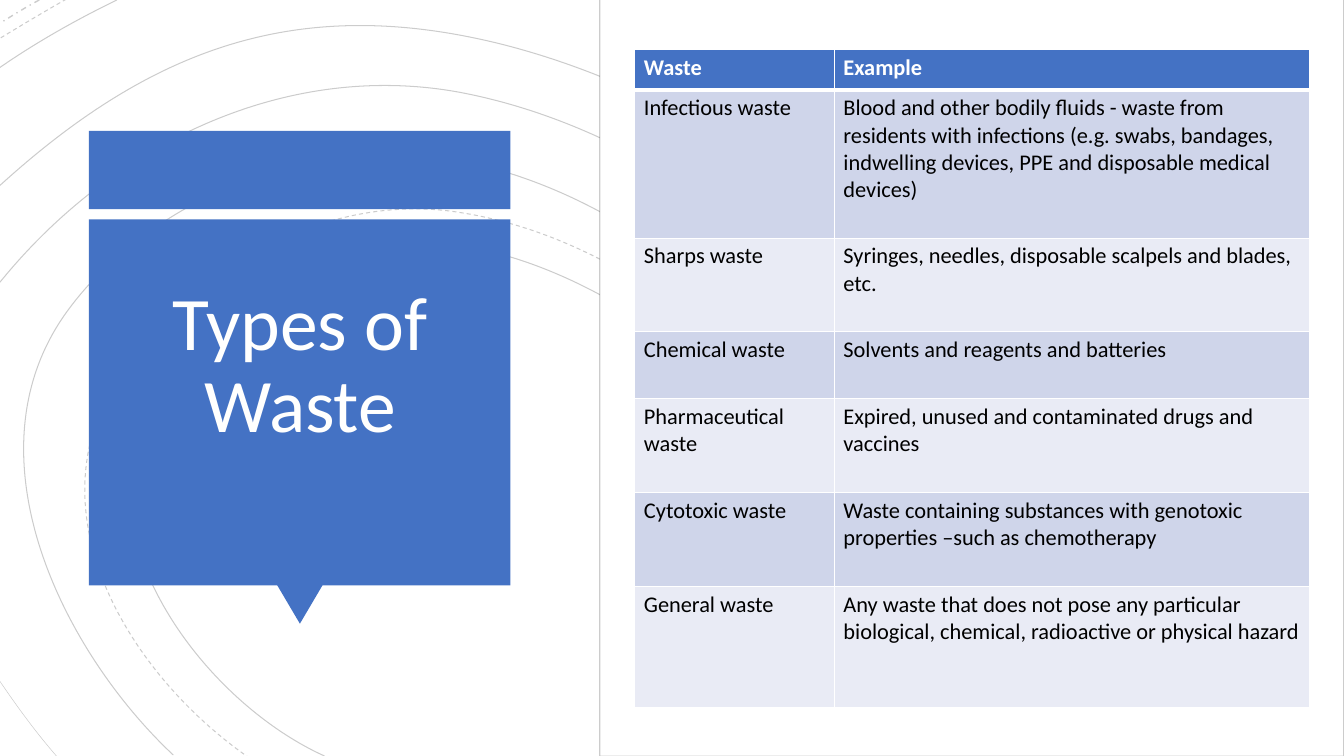
"""Build the "Types of Waste" slide: title block, contour lines and a table of examples."""
from lxml.etree import SubElement
from pptx import Presentation
from pptx.dml.color import RGBColor
from pptx.enum.dml import MSO_LINE as Dash
from pptx.enum.shapes import MSO_SHAPE as Shape
from pptx.enum.text import MSO_ANCHOR as Anchor, PP_ALIGN as Align
from pptx.oxml.ns import qn
from pptx.util import Pt

COLORS = {
    "accent": "4472C4",
    "white": "FFFFFF",
    "title": "FFFFFE",
    "black": "000000",
    "band_dark": "CFD5EA",
    "band_light": "E9EBF5",
}


def write_text(frame, text, size=16, color="black", bold=False, align=Align.LEFT, spacing=1.0):
    frame.word_wrap = True
    paragraph = frame.paragraphs[0]
    paragraph.alignment = align
    paragraph.line_spacing = spacing
    run = paragraph.add_run()
    run.text = text
    run.font.name = "Calibri"
    run.font.size = Pt(size)
    run.font.bold = bold
    run.font.color.rgb = RGBColor.from_string(COLORS[color])


def style_shape(shape, fill=None, line_width=None, dash=Dash.SOLID):
    shape.shadow.inherit = False
    if fill:
        shape.fill.solid()
        shape.fill.fore_color.rgb = RGBColor.from_string(COLORS[fill])
    else:
        shape.fill.background()
    if line_width:
        shape.line.width = Pt(line_width)
        shape.line.dash_style = dash
        shape.line.color.rgb = RGBColor.from_string(COLORS["black"])
        line_color = shape.line._ln.find(f".//{qn('a:srgbClr')}")
        SubElement(line_color, qn("a:alpha"), val="20000")
    else:
        shape.line.fill.background()


presentation = Presentation()
presentation.slide_width = Pt(960)
presentation.slide_height = Pt(540)
slide = presentation.slides.add_slide(presentation.slide_layouts[6])
shapes = slide.shapes

contours = [
    (0.75, Dash.SOLID, [
        (631, 541), (738, 450), (601.2, 294.5), (531.4, 226.8), (467.3, 165.6), (385.9, 118.1),
        (296.6, 110.2), (206.6, 101.5), (101.5, 149.8), (49, 221), (-25.9, 321.8),
        (43.2, 463.7), (123.8, 539.3)]),
    (0.75, Dash.SOLID, [
        (437, 540), (511.2, 522.7), (633.6, 480.2), (594, 380.9), (556.6, 287.3), (442.8, 200.2),
        (345.6, 178.6), (257, 158.4), (155.5, 202.3), (108.7, 281.5), (52.6, 377.3),
        (144, 500.4), (231.8, 540)]),
    (0.75, Dash.DASH, [
        (507.6, 540.7), (550.8, 524.9), (601.2, 501.1), (624.2, 459.4), (652.3, 409),
        (622.1, 356.4), (588.2, 316.8), (520.6, 236.9), (426.2, 163.4), (319, 150.5),
        (229.7, 140.4), (139, 192.2), (87.8, 265), (19.4, 362.9), (91.4, 481), (177.1, 540.7)]),
    (0.75, Dash.SOLID, [
        (702, 540.7), (813.6, 434.9), (684, 297.4), (603.4, 220.3), (527, 148.3),
        (434.2, 86.4), (329.8, 66.2), (204.5, 42.5), (79.9, 103), (0, 201.6)]),
    (0.38, Dash.SOLID, [(0, 486.7), (13.7, 506.9), (26.6, 524.2), (40.3, 540)]),
    (0.75, Dash.SOLID, [
        (766.8, 540.7), (873.4, 428.4), (768.2, 303.8), (679.7, 221), (588.2, 136.1),
        (480.2, 62.6), (358.6, 31.7), (214.6, -4.3), (109.4, 33.1), (0, 132.5)]),
    (0.75, Dash.SOLID, [(83.5, 0), (56.9, 13), (28.1, 28.8), (0, 48.2)]),
    (0.75, Dash.DASH, [(47.5, -0.7), (32.4, 7.9), (16.6, 17.3), (0, 27.4)]),
    (1, Dash.DASH_DOT, [(28.1, 0), (18.7, 5), (9.4, 10.8), (0, 16.6)]),
]
for width, dash, points in contours:
    start, *controls = [(x * 10, y * 10) for x, y in points]
    builder = shapes.build_freeform(*start, scale=Pt(0.1))
    builder.add_line_segments(controls, close=False)
    contour = builder.convert_to_shape()
    segments = list(contour._element.iter(qn("a:lnTo")))
    for index in range(0, len(segments), 3):
        curve = SubElement(segments[0].getparent(), qn("a:cubicBezTo"))
        for segment in segments[index:index + 3]:
            curve.append(segment[0])
    for segment in segments:
        segment.getparent().remove(segment)
    style_shape(contour, line_width=width, dash=dash)

title_blocks = [
    (Shape.RECTANGLE, 63.5, 93.5, 301, 56, 0),
    (Shape.ISOSCELES_TRIANGLE, 198, 418, 32.4, 27.5, 180),
    (Shape.RECTANGLE, 63.5, 156.8, 301, 261.4, 0),
]
for kind, left, top, width, height, rotation in title_blocks:
    block = shapes.add_shape(kind, Pt(left), Pt(top), Pt(width), Pt(height))
    block.rotation = rotation
    style_shape(block, fill="accent")

title = shapes.add_textbox(Pt(70.5), Pt(163.5), Pt(288), Pt(160.5))
title.text_frame.vertical_anchor = Anchor.BOTTOM
write_text(title.text_frame, "Types of Waste", size=54, color="title",
           align=Align.CENTER, spacing=0.9)

panel = shapes.add_shape(Shape.RECTANGLE, Pt(428.4), Pt(-0.5), Pt(531.4), Pt(540.7))
style_shape(panel, fill="white", line_width=0.75)

waste_rows = [
    (28.8, "Waste", "Example"),
    (105.8, "Infectious waste", "Blood and other bodily fluids - waste from residents with infections "
     "(e.g. swabs, bandages, indwelling devices, PPE and disposable medical devices)"),
    (67, "Sharps waste", "Syringes, needles, disposable scalpels and blades, etc."),
    (47.8, "Chemical waste", "Solvents and reagents and batteries"),
    (67, "Pharmaceutical waste", "Expired, unused and contaminated drugs and vaccines"),
    (67, "Cytotoxic waste",
     "Waste containing substances with genotoxic properties –such as chemotherapy"),
    (86.4, "General waste", "Any waste that does not pose any particular biological, chemical, "
     "radioactive or physical hazard"),
]
table = shapes.add_table(len(waste_rows), 2, Pt(453.5), Pt(35.5), Pt(482), Pt(470)).table
for column, width in zip(table.columns, (142.5, 339.5)):
    column.width = Pt(width)

for row_index, (height, *texts) in enumerate(waste_rows):
    table.rows[row_index].height = Pt(height)
    header = row_index == 0
    band = "accent" if header else "band_dark" if row_index % 2 else "band_light"
    for column_index, text in enumerate(texts):
        cell = table.cell(row_index, column_index)
        cell.margin_left = cell.margin_right = Pt(6.5)
        cell.margin_top = cell.margin_bottom = Pt(3.2)
        write_text(cell.text_frame, text, color="white" if header else "black", bold=header)
        properties = cell._tc.get_or_add_tcPr()
        for side in ("L", "R", "T", "B"):
            thick = (header and side == "B") or (row_index == 1 and side == "T")
            border = SubElement(properties, qn(f"a:ln{side}"), w=str(Pt(3 if thick else 1)))
            border_fill = SubElement(border, qn("a:solidFill"))
            SubElement(border_fill, qn("a:srgbClr"), val=COLORS["white"])
        cell.fill.solid()
        cell.fill.fore_color.rgb = RGBColor.from_string(COLORS[band])

presentation.save("out.pptx")
